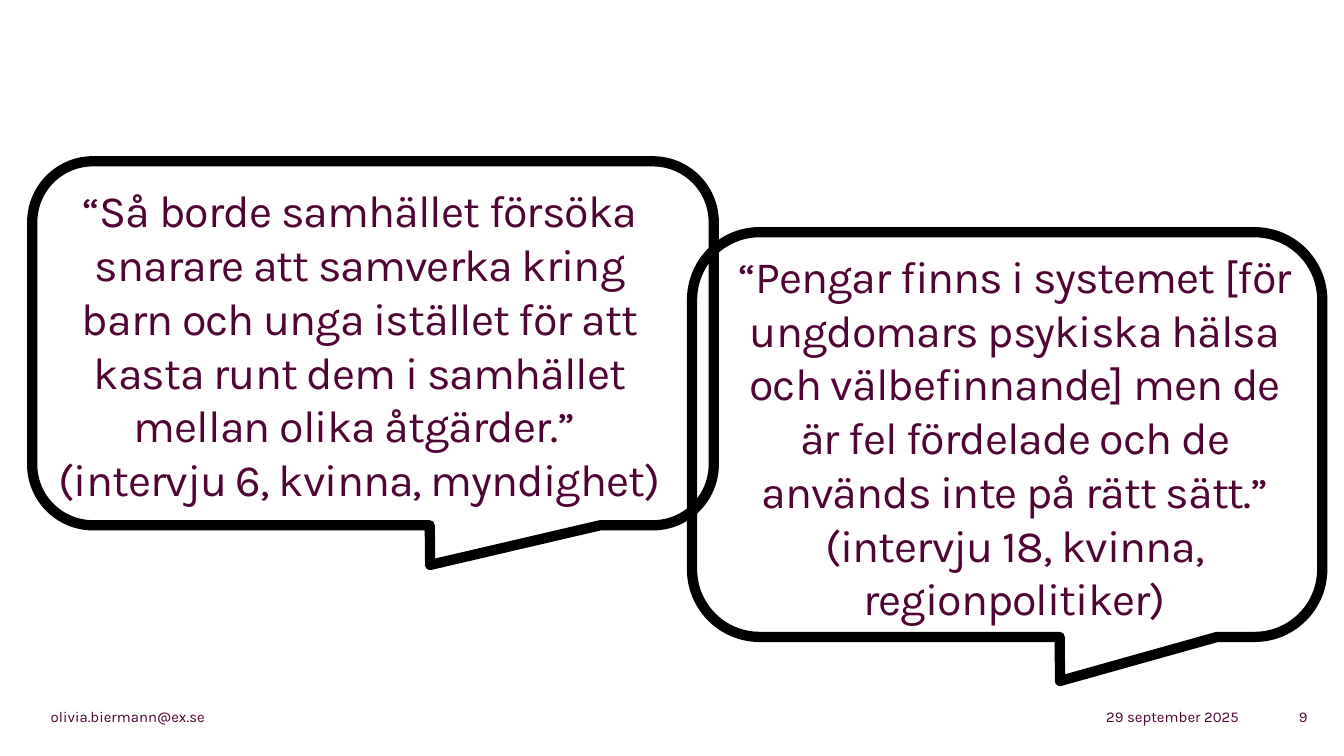
from dataclasses import dataclass

import pptx
import pptx.dml.color
import pptx.enum.shapes
import pptx.enum.text
import pptx.util

Cm = pptx.util.Cm
Pt = pptx.util.Pt
ALIGN = pptx.enum.text.PP_ALIGN
ANCHOR = pptx.enum.text.MSO_ANCHOR

PLUM = pptx.dml.color.RGBColor(0x4F, 0x04, 0x33)
BLACK = pptx.dml.color.RGBColor(0, 0, 0)
FONT = "Karla"


@dataclass
class Box:
    left: float
    top: float
    width: float
    height: float

    def lengths(self) -> list[pptx.util.Length]:
        return [Cm(v) for v in (self.left, self.top, self.width, self.height)]


@dataclass
class Text:
    box: Box
    paragraphs: list[str]
    align: ALIGN


def add_text(s, text: Text, size: float, anchor: ANCHOR, inset: float):
    """Add a wrapped text box and return its text frame."""
    tf = s.shapes.add_textbox(*text.box.lengths()).text_frame
    tf.word_wrap = True
    tf.vertical_anchor = anchor
    tf.margin_top = tf.margin_bottom = Cm(inset)
    for i, content in enumerate(text.paragraphs):
        p = tf.add_paragraph() if i else tf.paragraphs[0]
        p.alignment = text.align
        r = p.add_run()
        r.text = content
        r.font.name = FONT
        r.font.size = Pt(size)
        r.font.color.rgb = PLUM
    return tf


def add_quote(s, text: Text) -> None:
    """Add large quote text with tightened letter spacing."""
    tf = add_text(s, text, 24, ANCHOR.TOP, 0.13)
    for p in tf.paragraphs:
        p.line_spacing = Pt(28.8)
        for r in p.runs:
            r.font._element.set("spc", "-50")


def add_bubble(s, box: Box) -> None:
    """Add an unfilled speech bubble with a heavy outline."""
    sp = s.shapes.add_shape(
        pptx.enum.shapes.MSO_SHAPE.ROUNDED_RECTANGULAR_CALLOUT, *box.lengths())
    for i, value in enumerate((0.084, 0.609, 0.167)):
        sp.adjustments[i] = value
    sp.shadow.inherit = False
    sp.fill.background()
    sp.line.color.rgb = BLACK
    sp.line.width = Pt(5.5)


FOOTERS = [
    Text(Box(18.39, 13.31, 5.28, 0.48), ["29 september 2025"], ALIGN.RIGHT),
    Text(Box(23.06, 13.31, 1.9, 0.48), ["9"], ALIGN.RIGHT),
    Text(Box(0.71, 13.31, 8.59, 0.48), ["olivia.biermann@ex.se"], ALIGN.LEFT),
]
QUOTES = [
    Text(Box(13.64, 4.57, 11.07, 2.39),
         ["“Pengar finns i systemet [för ungdomars psykiska hälsa och "
          "välbefinnande] men de är fel fördelade och de används inte på "
          "rätt sätt.” (intervju 18, kvinna, regionpolitiker)"],
         ALIGN.CENTER),
    Text(Box(0.71, 3.33, 12.17, 4.01),
         ["“Så borde samhället försöka snarare att samverka kring barn och "
          "unga istället för att kasta runt dem i samhället mellan olika "
          "åtgärder.” ",
          "(intervju 6, kvinna, myndighet)"],
         ALIGN.CENTER),
]
BUBBLES = [Box(13.08, 4.39, 11.91, 7.65), Box(0.61, 3.05, 12.88, 6.88)]


def main() -> None:
    prs = pptx.Presentation()
    prs.slide_width, prs.slide_height = Cm(25.4), Cm(14.29)
    s = prs.slides.add_slide(prs.slide_layouts[6])  # blank: no title here

    # Footer line
    for footer in FOOTERS:
        add_text(s, footer, 8, ANCHOR.MIDDLE, 0)

    # Interview quotes in speech bubbles
    for bubble, quote in zip(BUBBLES, QUOTES):
        add_bubble(s, bubble)
        add_quote(s, quote)

    prs.save("out.pptx")


if __name__ == "__main__":
    main()
